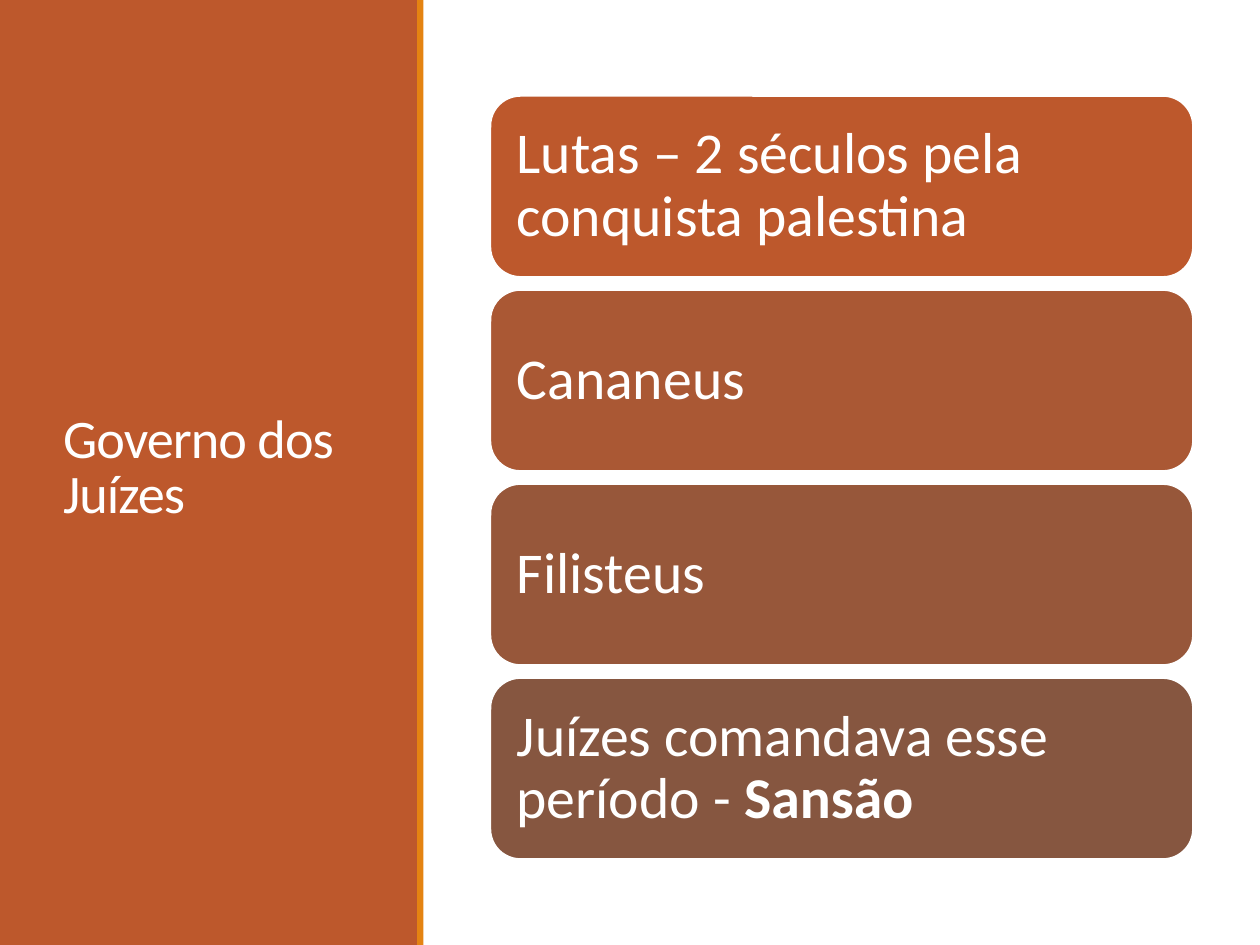
"""Build the slide on the government of the Judges."""
import pptx
import pptx.util
import pptx.dml.color
import pptx.enum.shapes
import pptx.enum.text

Inches = pptx.util.Inches
Pt = pptx.util.Pt
MSO_SHAPE = pptx.enum.shapes.MSO_SHAPE
COLORS = {"panel": "BD582C", "stripe": "E48312", "white": "FFFFFF"}
FONT = "Calibri"
CARDS = [
    ("BD582C", "Lutas – 2 séculos pela conquista palestina", ""),
    ("AA5834", "Cananeus", ""),
    ("97573A", "Filisteus", ""),
    ("865640", "Juízes comandava esse período - ", "Sansão"),
]
CARD_TOP, CARD_STEP = 0.76, 1.54


def rgb(value):
    """Return the colour for a hex string."""
    return pptx.dml.color.RGBColor.from_string(value)


def add_box(s, kind, left, top, width, height, fill):
    """Add a filled preset shape without line or shadow."""
    sp = s.shapes.add_shape(kind, Inches(left), Inches(top), Inches(width), Inches(height))
    sp.shadow.inherit = False
    sp.fill.solid()
    sp.fill.fore_color.rgb = rgb(fill)
    sp.line.fill.background()
    return sp


def style_text(tf, size, line_spacing):
    """Format the first paragraph of a vertically centred text frame."""
    tf.word_wrap = True
    tf.auto_size = pptx.enum.text.MSO_AUTO_SIZE.NONE
    tf.vertical_anchor = pptx.enum.text.MSO_ANCHOR.MIDDLE
    p = tf.paragraphs[0]
    p.alignment = pptx.enum.text.PP_ALIGN.LEFT
    p.line_spacing = line_spacing
    p.font.name = FONT
    p.font.size = Pt(size)
    p.font.color.rgb = rgb(COLORS["white"])
    return p


def set_title(s, text):
    """Place the title over the side panel."""
    sp = s.shapes.title
    sp.left, sp.top = Inches(0.4), Inches(0.57)
    sp.width, sp.height = Inches(2.53), Inches(6.31)
    p = style_text(sp.text_frame, 31, 0.85)
    r = p.add_run()
    r.text = text
    r._r.get_or_add_rPr().set("spc", "-50")
    s.shapes.element.append(sp.element)


def add_card(s, top, fill, text, bold_text):
    """Add a rounded card whose text may end in bold."""
    sp = add_box(s, MSO_SHAPE.ROUNDED_RECTANGLE, 3.89, top, 5.58, 1.44, fill)
    sp.line.color.rgb = rgb(COLORS["white"])
    sp.line.width = Pt(1.25)
    tf = sp.text_frame
    tf.margin_left = tf.margin_right = tf.margin_top = tf.margin_bottom = Inches(0.14)
    p = style_text(tf, 33, 0.9)
    p.add_run().text = text
    if bold_text:
        r = p.add_run()
        r.text = bold_text
        r.font.bold = True


def main():
    """Build and save the slide."""
    prs = pptx.Presentation()
    prs.slide_width, prs.slide_height = Inches(10), Inches(7.5)
    s = prs.slides.add_slide(prs.slide_layouts[5])
    add_box(s, MSO_SHAPE.RECTANGLE, 0, 0, 3.32, 7.5, COLORS["panel"])
    set_title(s, "Governo dos Juízes")
    add_box(s, MSO_SHAPE.RECTANGLE, 3.31, 0, 0.05, 7.5, COLORS["stripe"])
    for i, card in enumerate(CARDS):
        add_card(s, CARD_TOP + i * CARD_STEP, *card)
    prs.save("out.pptx")


if __name__ == "__main__":
    main()
